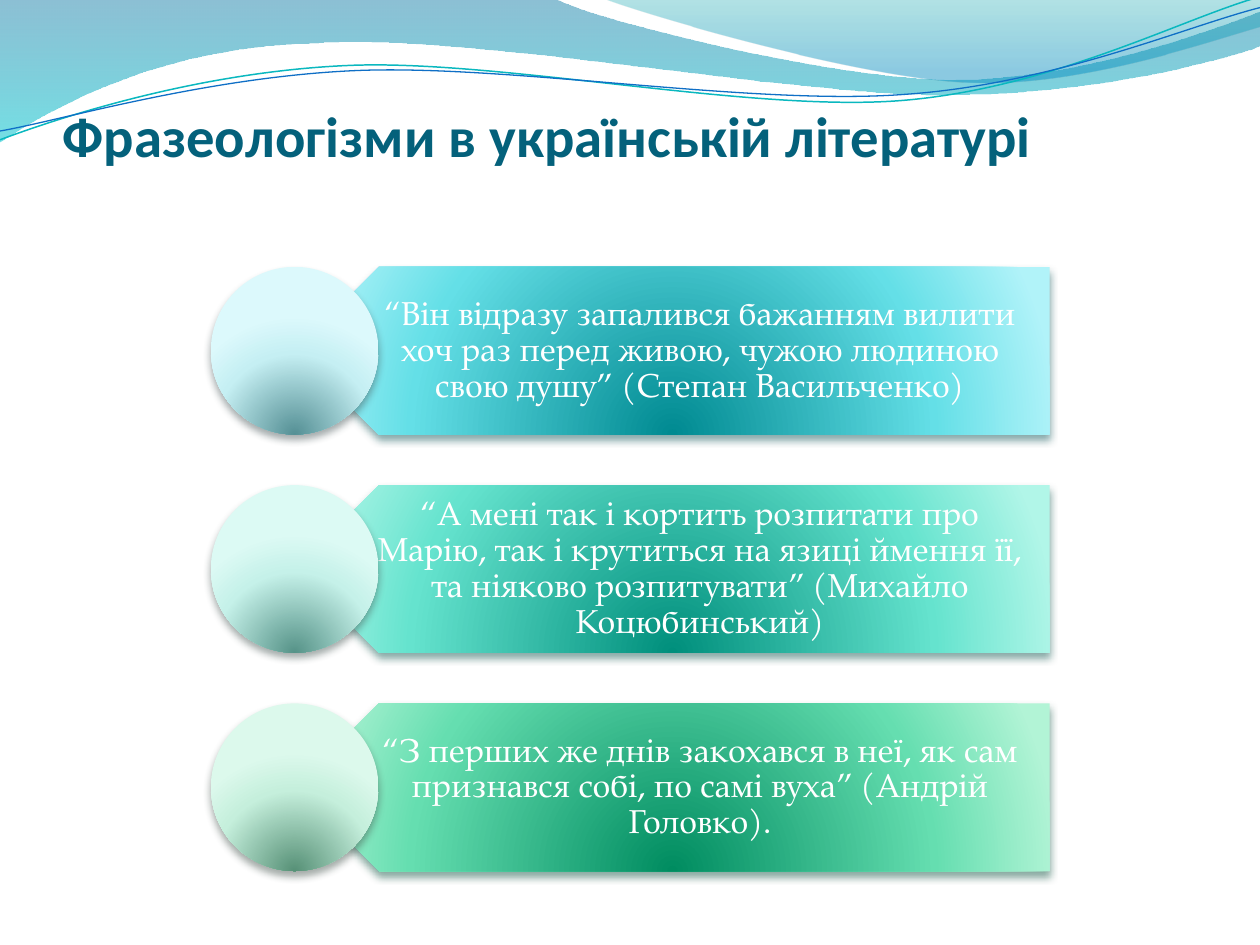
from math import cos, radians, sin

from lxml import etree
from pptx import Presentation
from pptx.dml.color import RGBColor
from pptx.enum.shapes import MSO_SHAPE as Preset
from pptx.enum.text import MSO_ANCHOR as Anchor, PP_ALIGN as Align
from pptx.oxml import parse_xml
from pptx.oxml.ns import qn
from pptx.util import Cm, Pt

COLORS = {
    "title": "04617B", "text": "FFFFFF",
    "wave_blue": "0074A1", "wave_aqua": "00C6CF",
    "crest_teal": "00A1A9", "crest_blue": "008BBF",
    "line_teal": "0AB8BF", "line_blue": "0F6FC6",
}
TITLE_FONT, BODY_FONT = "Calibri", "TeX Gyre Pagella"
CM_PER_INCH = 2.54
CURVE_TILT = -2.7

# Wave outlines in inches: a pair is a straight step, six numbers are a Bezier curve
WAVE = [(0, 0), (4.4, -0.01), (4.76, 0.17, 6.64, 0.63, 7.58, 0.63),
        (8.53, 0.63, 9.58, 0.26, 10, 0.09), (10.01, 0.36),
        (9.83, 0.44, 8.7, 0.76, 7.46, 0.75), (6.22, 0.75, 3.82, 0.28, 2.57, 0.34),
        (1.29, 0.36, 0.46, 0.83, -0.01, 1.13), (0, 0)]
CREST = [(4.79, -0.01), (5.09, 0.11, 6.82, 0.62, 7.69, 0.65),
         (8.56, 0.69, 9.61, 0.32, 10, 0.21), (10, 0), (4.79, -0.01)]
TEAL_LINE = [(0, 1.11), (0.48, 0.93, 1.58, 0.57, 2.77, 0.52),
             (3.95, 0.47, 5.93, 0.89, 7.13, 0.8), (8.33, 0.71, 9.38, 0.15, 9.98, -0.02)]
BLUE_LINE = [(0, 1.04), (0.47, 0.96, 1.64, 0.61, 2.83, 0.56),
             (4.03, 0.51, 5.97, 0.84, 7.17, 0.75), (8.36, 0.67, 9.41, 0.21, 10, 0.06)]

# Text, plate gradient, plate shadow, circle gradient, circle shadow
QUOTES = [
    ("“Він відразу запалився бажанням вилити хоч раз перед живою, чужою людиною "
     "свою душу” (Степан Васильченко)",
     ("008A91", "64DFE7", "B1F3F9"), "024B4E", ("559095", "C5EFF3", "DCF9FC"), "425254"),
    ("“А мені так і кортить розпитати про Марію, так і крутиться на язиці ймення її, "
     "та ніяково розпитувати” (Михайло Коцюбинський)",
     ("008F7C", "65E3CE", "B1F6E8"), "034C44", ("569388", "C5F1E9", "DCFAF4"), "425350"),
    ("“З перших же днів закохався в неї, як сам признався собі, по самі вуха” "
     "(Андрій Головко).",
     ("008C60", "65DEB0", "B2F4D6"), "044A37", ("579177", "C5EFDC", "DCF9EC"), "42524B"),
]


def level(step, box, tilt):
    """Move one outline step into its box, in EMU, with the tilt taken out."""
    left, top, width, height = box
    cosine, sine = cos(radians(tilt)), sin(radians(tilt))
    points = []
    for x, y in zip(step[::2], step[1::2]):
        dx, dy = x - left - width / 2, y - top - height / 2
        points.append((Cm((dx * cosine + dy * sine + width / 2) * CM_PER_INCH),
                       Cm((dy * cosine - dx * sine + height / 2) * CM_PER_INCH)))
    return points


def set_gradient(shape, stops, direction):
    """Fill with (position %, colour, opacity %) stops."""
    shape.fill.solid()
    solid = shape._element.spPr.find(qn("a:solidFill"))
    stop_xml = "".join(
        f'<a:gs pos="{position * 1000}"><a:srgbClr val="{color}">'
        f'<a:alpha val="{opacity * 1000}"/></a:srgbClr></a:gs>'
        for position, color, opacity in stops)
    solid.getparent().replace(solid, parse_xml(
        '<a:gradFill xmlns:a="http://schemas.openxmlformats.org/drawingml/2006/main" '
        f'rotWithShape="1"><a:gsLst>{stop_xml}</a:gsLst>{direction}</a:gradFill>'))


def set_shadow(shape, color):
    """Put a soft shadow straight below the shape."""
    effects = shape._element.spPr.find(qn("a:effectLst"))
    shadow = etree.SubElement(effects, qn("a:outerShdw"), blurRad=str(Pt(4.5)),
                              dist=str(Pt(3)), dir="5400000", rotWithShape="0")
    tint = etree.SubElement(shadow, qn("a:srgbClr"), val=color)
    etree.SubElement(tint, qn("a:alpha"), val="48000")


class SlideBuilder:
    LINEAR_DOWN = '<a:lin ang="5400000" scaled="1"/>'
    GLOW_BELOW = ('<a:path path="circle"><a:fillToRect l="50000" t="130000" '
                  'r="50000" b="-30000"/></a:path>')

    def __init__(self, slide):
        self.shapes = slide.shapes

    def freeform(self, outline, box, closed, tilt=0):
        steps = [level(step, box, tilt) for step in outline]
        builder = self.shapes.build_freeform(*steps[0][-1])
        builder.add_line_segments([step[-1] for step in steps[1:]], close=closed)
        shape = builder.convert_to_shape()
        shape.left, shape.top, shape.width, shape.height = (
            Cm(value * CM_PER_INCH) for value in box)
        shape.rotation = tilt
        shape.shadow.inherit = False
        # Curves replace the straight segments
        outline_xml = next(shape._element.iter(qn("a:path")))
        outline_xml.set("w", str(shape.width))
        outline_xml.set("h", str(shape.height))
        for segment, points in zip(list(outline_xml), steps):
            if len(points) == 3:
                curve = etree.Element(qn("a:cubicBezTo"))
                outline_xml.replace(segment, curve)
                segment = curve
            for point in list(segment):
                segment.remove(point)
            for x, y in points:
                etree.SubElement(segment, qn("a:pt"), x=str(x), y=str(y))
        return shape

    def wave(self, outline, box, stops):
        shape = self.freeform(outline, box, True)
        set_gradient(shape, stops, self.LINEAR_DOWN)
        shape.line.fill.background()

    def curve(self, outline, box, color, width):
        shape = self.freeform(outline, box, False, CURVE_TILT)
        shape.fill.background()
        shape.line.color.rgb = RGBColor.from_string(COLORS[color])
        shape.line.width = Pt(width)

    def glossy(self, preset, box, gradient, shadow, rotation=0):
        shape = self.shapes.add_shape(preset, *map(Cm, box))
        shape.rotation = rotation
        shape.line.fill.background()
        shape.shadow.inherit = False
        set_gradient(shape, [(position, color, 100) for position, color
                             in zip((0, 68, 100), gradient)], self.GLOW_BELOW)
        set_shadow(shape, shadow)

    def text(self, text, box, insets, anchor, align, font, size, color,
             bold=False, spacing=1.0):
        frame = self.shapes.add_textbox(*map(Cm, box)).text_frame
        frame.word_wrap = True
        frame.vertical_anchor = anchor
        (frame.margin_left, frame.margin_top,
         frame.margin_right, frame.margin_bottom) = map(Cm, insets)
        paragraph = frame.paragraphs[0]
        paragraph.text = text
        paragraph.alignment = align
        paragraph.line_spacing = spacing
        paragraph.font.name = font
        paragraph.font.size = Pt(size)
        paragraph.font.bold = bold
        paragraph.font.color.rgb = RGBColor.from_string(COLORS[color])


def main():
    presentation = Presentation()
    presentation.slide_width, presentation.slide_height = Cm(25.4), Cm(19.05)
    builder = SlideBuilder(presentation.slides.add_slide(presentation.slide_layouts[6]))

    # Waves along the top
    builder.wave(WAVE, (-0.01, -0.01, 10.02, 1.14),
                 [(0, COLORS["wave_blue"], 45), (100, COLORS["wave_aqua"], 55)])
    builder.wave(CREST, (4.79, -0.01, 5.21, 0.7),
                 [(0, COLORS["crest_teal"], 30), (80, COLORS["crest_blue"], 45)])
    builder.curve(TEAL_LINE, (-0.02, 0.22, 10.02, 0.71), "line_teal", 0.85)
    builder.curve(BLUE_LINE, (-0.02, 0.3, 10.03, 0.58), "line_blue", 0.75)

    # Title
    builder.text("Фразеологізми в українській літературі", (1.27, 1.96, 22.86, 3.18),
                 (0, 0.13, 0, 2.21), Anchor.BOTTOM, Align.LEFT,
                 TITLE_FONT, 32.4, "title", bold=True)

    # Quotes: a plate pointing left, its text, and a circle over the point
    height, pitch = 3.38, 4.4
    for row, (quote, plate, plate_shadow, circle, circle_shadow) in enumerate(QUOTES):
        top = 5.38 + row * pitch
        plate_box = (5.95, top, 15.21, height)
        builder.glossy(Preset.PENTAGON, plate_box, plate, plate_shadow, rotation=180)
        builder.text(quote, plate_box, (1.5, 0.2, 0.38, 0.2), Anchor.MIDDLE, Align.CENTER,
                     BODY_FONT, 19, "text", spacing=0.9)
        builder.glossy(Preset.OVAL, (4.25, top, height, height), circle, circle_shadow)

    presentation.save("out.pptx")


if __name__ == "__main__":
    main()
